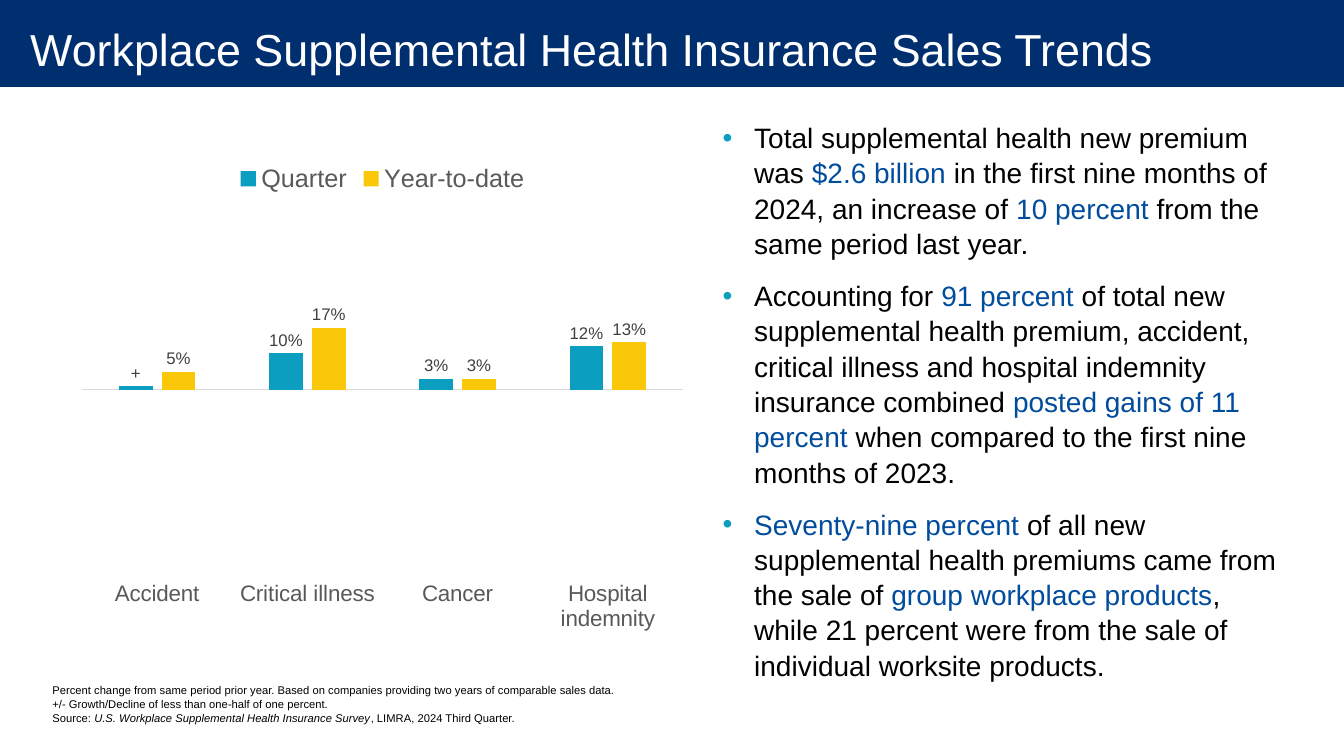
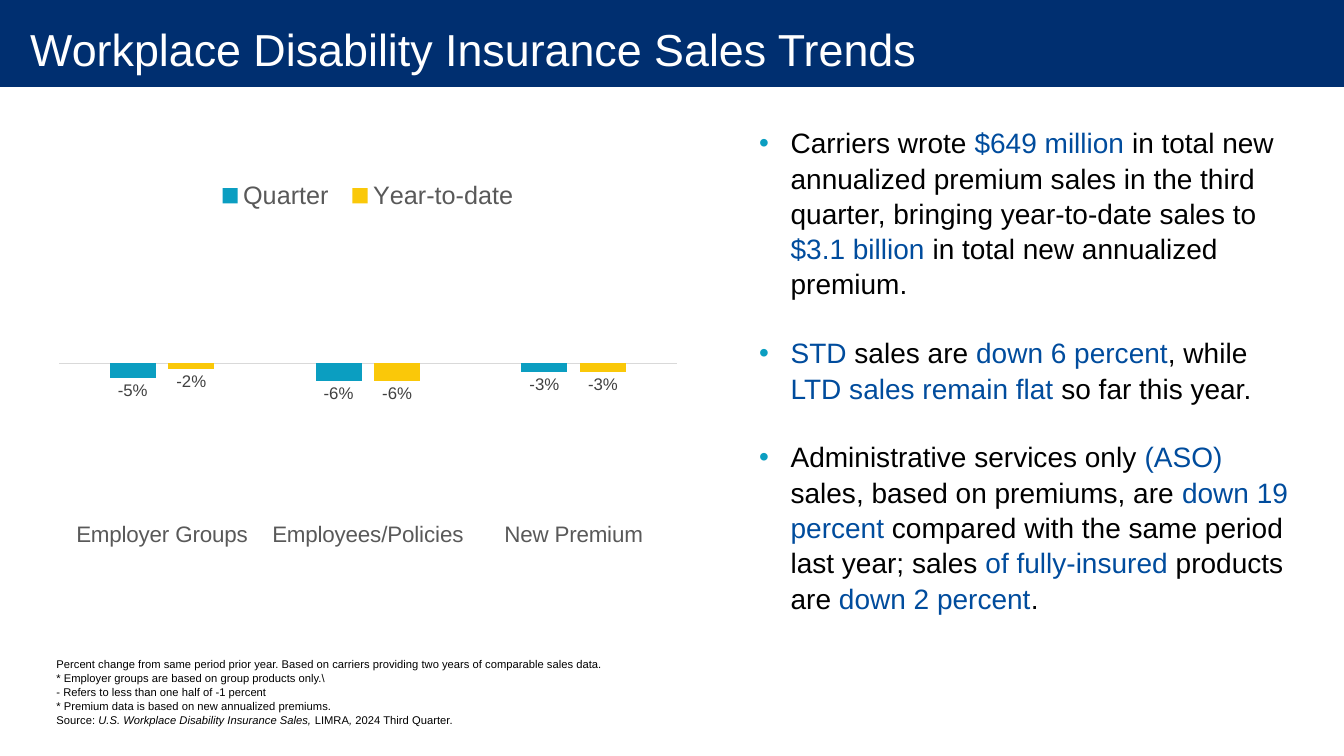
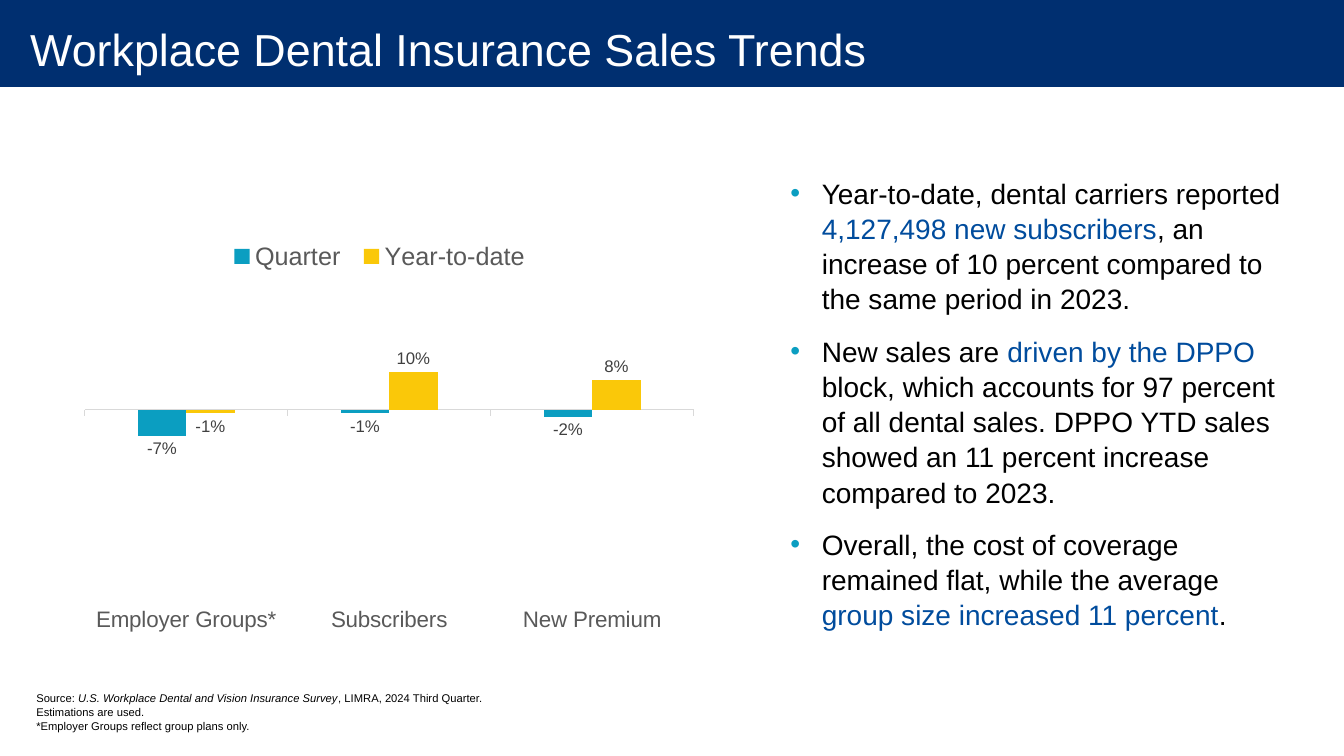
from pptx import Presentation
from pptx.chart.data import CategoryChartData
from pptx.dml.color import RGBColor
from pptx.enum.chart import XL_CHART_TYPE, XL_LABEL_POSITION, XL_LEGEND_POSITION
from pptx.enum.chart import XL_TICK_LABEL_POSITION, XL_TICK_MARK
from pptx.enum.shapes import MSO_SHAPE
from pptx.enum.text import MSO_ANCHOR, MSO_AUTO_SIZE, PP_ALIGN
from pptx.oxml import parse_xml
from pptx.oxml.ns import nsdecls, qn
from pptx.util import Pt

FONT = "Arial"
HUES = {
    "band": "002F70", "white": "FFFFFF", "black": "000000", "mark": "004C9D",
    "teal": "0B9EC1", "gold": "FAC809", "axis": "595959", "label": "404040",
    "rule": "D9D9D9",
}
HUES = {name: RGBColor.from_string(code) for name, code in HUES.items()}


def write(frame, *lines, size, hue="black", mark=None, italic=False, bullet=False,
          gap=0, lead=1.0, anchor=MSO_ANCHOR.TOP):
    frame.word_wrap = True
    frame.auto_size = MSO_AUTO_SIZE.NONE
    frame.vertical_anchor = anchor
    for row, line in enumerate(lines):
        para = frame.add_paragraph() if row else frame.paragraphs[0]
        props = para._p.get_or_add_pPr()
        inset = Pt(22.5) if bullet else 0
        props.set("marL", str(inset))
        props.set("indent", str(-inset))
        if bullet:
            props.append(parse_xml(
                f'<a:buClr {nsdecls("a")}><a:srgbClr val="{HUES["teal"]}"/></a:buClr>'))
            props.append(parse_xml(f'<a:buChar {nsdecls("a")} char="•"/>'))
        else:
            props.append(parse_xml(f'<a:buNone {nsdecls("a")}/>'))
        para.alignment = PP_ALIGN.LEFT
        para.line_spacing = lead
        para.space_before = Pt(gap if row else 0)
        para.space_after = Pt(0)
        for part, text in enumerate(line.split("|")):
            if not text:
                continue
            run = para.add_run()
            run.text = text
            special = part % 2 == 1
            run.font.name = FONT
            run.font.size = Pt(size)
            run.font.italic = italic and special
            run.font.color.rgb = HUES[mark if mark and special else hue]


def fix(host, spot, box, inner=False):
    for old in host.findall(qn("c:layout")):
        host.remove(old)
    kind = '<c:layoutTarget val="inner"/>' if inner else ""
    modes = '<c:xMode val="edge"/><c:yMode val="edge"/>'
    sides = "".join(f'<c:{side} val="{num}"/>' for side, num in zip("xywh", box))
    host.insert(spot, parse_xml(
        f'<c:layout {nsdecls("c")}><c:manualLayout>{kind}{modes}{sides}'
        '</c:manualLayout></c:layout>'))


pages = [
    {
        "title": "Workplace Supplemental Health Insurance Sales Trends",
        "graph": (49.7, 108.7, 447.1, 348.5),
        "cats": ["Accident", "Critical illness", "Cancer", "Hospital indemnity"],
        "vals": [(0.01, 0.1, 0.03, 0.12), (0.05, 0.17, 0.03, 0.13)],
        "plus": "+",
        "list": (509, 81.4, 421.2, 431.3),
        "gap": 12,
        "points": [
            "Total supplemental health new premium was |$2.6 billion |in the first nine "
            "months of 2024, an increase of |10 percent |from the same period last year.",
            "Accounting for |91 percent |of total new supplemental health premium, "
            "accident, critical illness and hospital indemnity insurance combined"
            "| posted gains of 11 percent |when compared to the first nine months of 2023.",
            "|Seventy-nine percent |of all new supplemental health premiums came from the "
            "sale of| group workplace products|, while 21 percent were from the sale of "
            "individual worksite products.",
        ],
        "foot": (30.2, 469.4, 421.2, 51.8),
        "notes": [
            "Percent change from same period prior year. Based on companies providing "
            "two years of comparable sales data.",
            "+/- Growth/Decline of less than one-half of one percent.",
            "Source: |U.S. Workplace Supplemental Health Insurance Survey|, LIMRA, "
            "2024 Third Quarter.",
        ],
    },
    {
        "title": "Workplace Disability Insurance Sales Trends",
        "graph": (33.1, 114.5, 459.4, 281.5),
        "cats": ["Employer Groups", "Employees/Policies", "New Premium"],
        "vals": [(-0.05, -0.06, -0.03), (-0.02, -0.06, -0.03)],
        "key": (0.25, 0.04, 0.5, 0.1),
        "list": (535, 85, 392.4, 346.3),
        "gap": 24,
        "points": [
            "Carriers wrote |$649 million |in total new annualized premium sales in the "
            "third quarter, bringing year-to-date sales to |$3.1 billion |in total new "
            "annualized premium.",
            "|STD| sales are |down 6 percent|, while |LTD sales remain flat |so far this "
            "year.",
            "Administrative services only |(ASO) |sales, based on premiums, are |down 19 "
            "percent |compared with the same period last year; sales |of fully-insured "
            "|products are |down 2 percent|.",
        ],
        "foot": (33.1, 467.3, 724.3, 55.4),
        "notes": [
            "Percent change from same period prior year. Based on carriers providing "
            "two years of comparable sales data.",
            "* Employer groups are based on group products only.\\",
            "- Refers to less than one half of -1 percent",
            "* Premium data is based on new annualized premiums.",
            "Source: |U.S. Workplace Disability Insurance Sales, |LIMRA|, |2024 Third "
            "Quarter.",
        ],
    },
    {
        "title": "Workplace Dental Insurance Sales Trends",
        "graph": (46.8, 127.4, 457.9, 348.5),
        "cats": ["Employer Groups*", "Subscribers", "New Premium"],
        "vals": [(-0.07, -0.01, -0.02), (-0.01, 0.1, 0.08)],
        "key": (0.24, 0.12, 0.5, 0.08),
        "plot": (0.03, 0.32, 0.95, 0.54),
        "top": 0.2,
        "lap": 0,
        "tick": XL_TICK_MARK.OUTSIDE,
        "list": (557.3, 121, 371.5, 419),
        "gap": 12,
        "points": [
            "Year-to-date, dental carriers reported |4,127,498 new subscribers|, an "
            "increase of 10 percent compared to the same period in 2023.",
            "New sales are |driven by the DPPO |block, which accounts for 97 percent of "
            "all dental sales. DPPO YTD sales showed an 11 percent increase compared to "
            "2023.",
            "Overall, the cost of coverage remained flat, while the average |group size "
            "increased 11 percent|.",
        ],
        "foot": (18.7, 475.2, 421.2, 51.8),
        "notes": [
            "Source: |U.S. Workplace Dental and Vision Insurance Survey|, LIMRA, 2024 "
            "Third Quarter.",
            "Estimations are used.",
            "*Employer Groups reflect group plans only.",
        ],
    },
]

deck = Presentation()
deck.slide_width, deck.slide_height = Pt(960), Pt(540)
layout = deck.slide_layouts[3]

for index, page in enumerate(pages):
    slide = deck.slides.add_slide(layout)
    if index == 0:
        band = slide.shapes.add_shape(MSO_SHAPE.RECTANGLE, 0, 0, Pt(960), Pt(62))
        band.shadow.inherit = False
        band.fill.solid()
        band.fill.fore_color.rgb = HUES["band"]
        band.line.fill.background()
        layout.shapes._spTree.insert(2, band._element)

    title, body, foot = slide.placeholders
    places = (0, 0, 960, 70), page["list"], page["foot"]
    for holder, place in zip((title, body, foot), places):
        holder.left, holder.top, holder.width, holder.height = map(Pt, place)
    frame = title.text_frame
    frame.margin_left, frame.margin_right = Pt(21.6), Pt(14.4)
    frame.margin_top = frame.margin_bottom = 0
    write(frame, page["title"], size=32, hue="white", anchor=MSO_ANCHOR.MIDDLE)
    write(body.text_frame, *page["points"], size=20, mark="mark", bullet=True,
          gap=page["gap"], lead=1.05)
    write(foot.text_frame, *page["notes"], size=8, italic=True, lead=1.05,
          anchor=MSO_ANCHOR.BOTTOM)

    data = CategoryChartData(number_format="0%")
    data.categories = page["cats"]
    for name, vals in zip(("Quarter", "Year-to-date"), page["vals"]):
        data.add_series(name, vals)
    chart = slide.shapes.add_chart(
        XL_CHART_TYPE.COLUMN_CLUSTERED, *map(Pt, page["graph"]), data).chart
    chart.has_title = False
    chart.font.name = FONT
    chart.font.size = Pt(10)
    chart.font.color.rgb = HUES["black"]

    chart.has_legend = True
    legend = chart.legend
    legend.position = XL_LEGEND_POSITION.TOP
    legend.include_in_layout = False
    cat, val = chart.category_axis, chart.value_axis
    cat.tick_label_position = XL_TICK_LABEL_POSITION.LOW
    cat.major_tick_mark = page.get("tick", XL_TICK_MARK.NONE)
    cat.format.line.color.rgb = HUES["rule"]
    cat.format.line.width = Pt(0.75)
    val.visible = False
    val.has_major_gridlines = False
    val.minimum_scale, val.maximum_scale = -0.5, page.get("top", 0.5)

    plot = chart.plots[0]
    plot.vary_by_categories = False
    plot.gap_width, plot.overlap = 219, page.get("lap", -27)
    fonts = [(legend.font, 18, "axis"), (cat.tick_labels.font, 16, "axis")]
    for series, hue in zip(plot.series, ("teal", "gold")):
        series.invert_if_negative = False
        series.format.fill.solid()
        series.format.fill.fore_color.rgb = HUES[hue]
        labels = series.data_labels
        labels.show_value = True
        labels.number_format, labels.number_format_is_linked = "0%", False
        labels.position = XL_LABEL_POSITION.OUTSIDE_END
        fonts.append((labels.font, 12, "label"))
    if "plus" in page:
        label = plot.series[0].points[0].data_label
        label.position = XL_LABEL_POSITION.OUTSIDE_END
        run = label.text_frame.paragraphs[0].add_run()
        run.text = page["plus"]
        fonts.append((run.font, 12, "label"))
    for font, size, hue in fonts:
        font.name, font.size = FONT, Pt(size)
        font.color.rgb = HUES[hue]

    if "key" in page:
        fix(legend._element, 1, page["key"])
    if "plot" in page:
        fix(chart._chartSpace.chart.plotArea, 0, page["plot"], inner=True)

deck.save("out.pptx")
